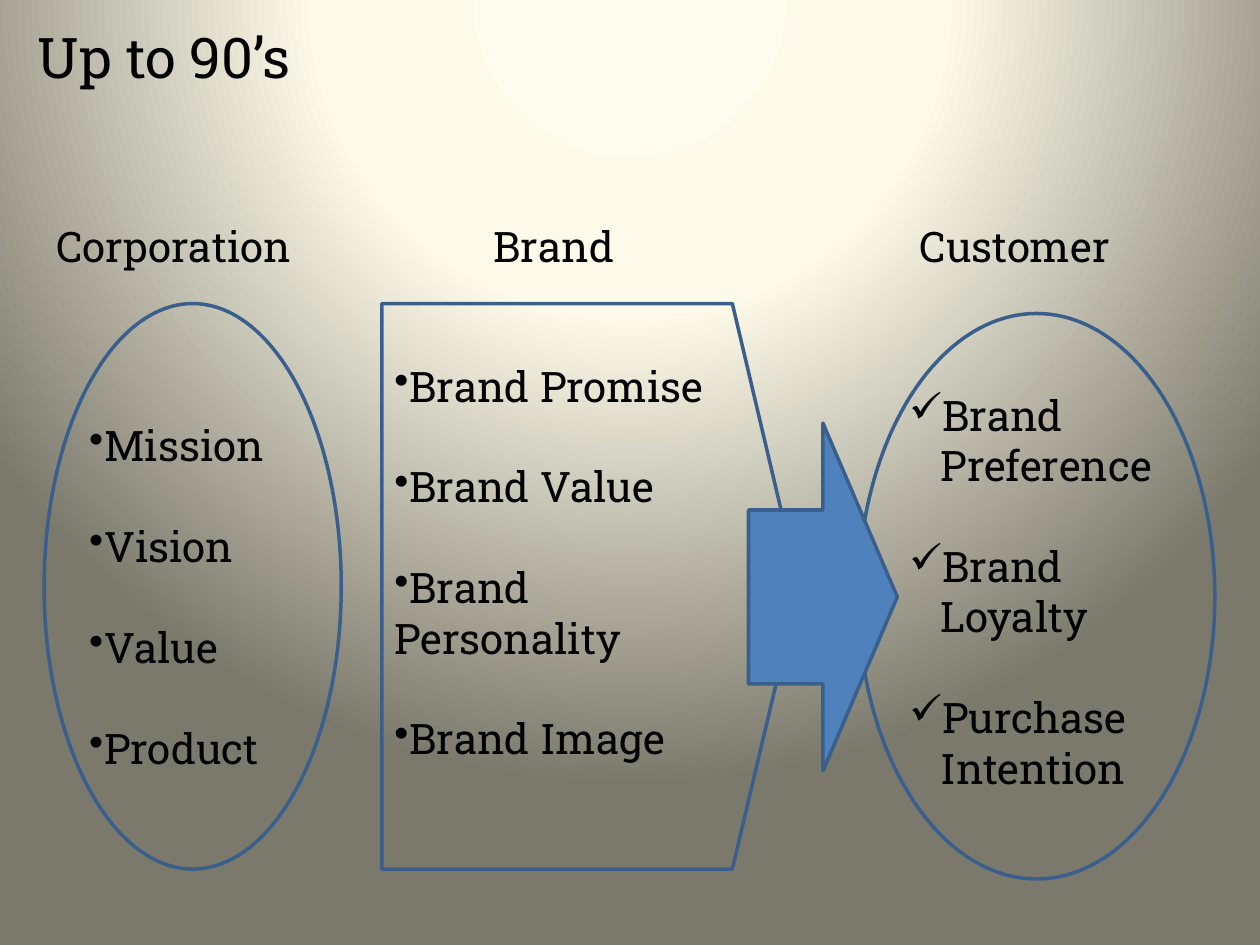
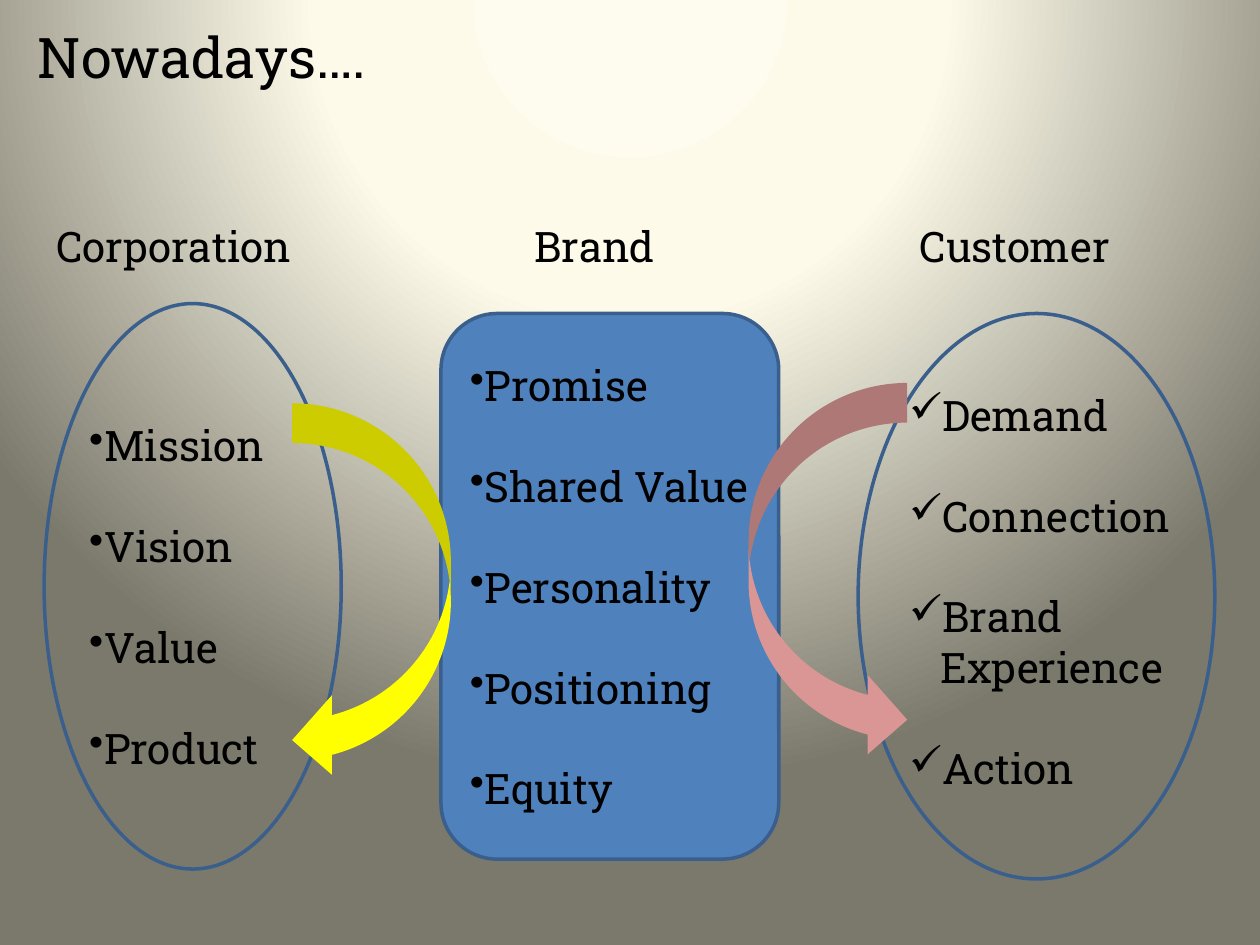
from dataclasses import dataclass

from lxml import etree
from pptx import Presentation
from pptx.dml.color import RGBColor
from pptx.enum.shapes import MSO_SHAPE
from pptx.enum.text import MSO_ANCHOR, MSO_AUTO_SIZE, PP_ALIGN
from pptx.oxml import parse_xml
from pptx.oxml.ns import nsdecls, qn
from pptx.shapes.autoshape import Shape
from pptx.slide import Slide, SlideMaster
from pptx.text.text import TextFrame
from pptx.util import Cm, Pt

OVAL = MSO_SHAPE.OVAL
PENTAGON = MSO_SHAPE.PENTAGON
ROUNDED = MSO_SHAPE.ROUNDED_RECTANGLE
RIGHT_ARROW = MSO_SHAPE.RIGHT_ARROW
CURVED_RIGHT = MSO_SHAPE.CURVED_RIGHT_ARROW
CURVED_LEFT = MSO_SHAPE.CURVED_LEFT_ARROW
TOP = MSO_ANCHOR.TOP
MIDDLE = MSO_ANCHOR.MIDDLE
LEFT = PP_ALIGN.LEFT
NO_AUTOFIT = MSO_AUTO_SIZE.NONE
TITLE_ONLY = 5


@dataclass(frozen=True)
class Theme:
    font: str = "Roboto Slab"
    title_size: float = 32
    body_size: float = 24
    item_gap: float = 28.8
    line_width: float = 2
    text: str = "000000"
    outline: str = "3A5F8C"
    blue: str = "4F81BD"
    pink: str = "D99694"
    yellow: str = "FFFF00"
    background: tuple[tuple[int, str], ...] = (
        (0, "FEFCEE"), (40, "FDFAEA"), (100, "7B796B"))


THEME = Theme()


@dataclass(frozen=True)
class Area:
    """A rectangle in centimetres."""
    left: float
    top: float
    width: float
    height: float

    def lengths(self) -> tuple[Cm, Cm, Cm, Cm]:
        return Cm(self.left), Cm(self.top), Cm(self.width), Cm(self.height)


@dataclass(frozen=True)
class Figure:
    kind: MSO_SHAPE
    area: Area
    fill: str | None = None
    outlined: bool = True
    adjustment: float | None = None


@dataclass(frozen=True)
class Items:
    lines: tuple[str, ...]
    bullet: str = "•"
    hanging: float = 0


@dataclass(frozen=True)
class Column:
    """A heading above a figure; without list_area the items sit in the figure."""
    heading: str
    heading_left: float
    heading_width: float
    figure: Figure
    items: Items
    list_area: Area | None = None
    anchor: MSO_ANCHOR = TOP
    top_inset: float = 0.13


@dataclass(frozen=True)
class Page:
    title: str
    columns: tuple[Column, ...]
    arrows: tuple[Figure, ...]


TITLE_AREA = Area(0.51, 0.33, 8, 1.63)
HEADING_TOP, HEADING_HEIGHT = 4.32, 1.27

CORPORATION = Column(
    "Corporation", 0.89, 5.92,
    Figure(OVAL, Area(0.89, 6.12, 5.99, 11.4)),
    Items(("Mission", "Vision", "Value", "Product")),
    Area(1.55, 8.33, 4.34, 7.44))


def customer(*lines: str) -> Column:
    return Column(
        "Customer", 18.29, 4.78,
        Figure(OVAL, Area(17.3, 6.32, 7.19, 11.4)),
        Items(lines, "✓", 0.63),
        Area(18.08, 7.72, 6.35, 8.46))


PAGES = (
    Page(
        "Up to 90’s",
        (CORPORATION,
         Column("Brand", 9.7, 3.2,
                Figure(PENTAGON, Area(7.7, 6.12, 8.41, 11.4), adjustment=0.16),
                Items(("Brand Promise", "Brand Value", "Brand Personality",
                       "Brand Image")),
                top_inset=1.14),
         customer("Brand\vPreference", "Brand\vLoyalty", "Purchase\vIntention")),
        (Figure(RIGHT_ARROW, Area(15.09, 8.53, 3, 7.01), THEME.blue),)),
    Page(
        "Nowadays….",
        (CORPORATION,
         customer("Demand", "Connection", "Brand\vExperience", "Action"),
         Column("Brand", 10.52, 3.2,
                Figure(ROUNDED, Area(8.89, 6.32, 6.81, 11), THEME.blue),
                Items(("Promise", "Shared Value", "Personality", "Positioning",
                       "Equity")),
                anchor=MIDDLE)),
        (Figure(CURVED_RIGHT, Area(15.09, 7.72, 3.2, 7.59), THEME.pink, False),
         Figure(CURVED_LEFT, Area(5.89, 8.13, 3.2, 7.59), THEME.yellow, False))),
)


def set_background(master: SlideMaster) -> None:
    """Give the master a circular gradient centred above the slide."""
    master.background.fill.solid()
    stops = "".join(
        f'<a:gs pos="{position * 1000}"><a:srgbClr val="{color}"/></a:gs>'
        for position, color in THEME.background)
    gradient = parse_xml(
        f'<a:gradFill {nsdecls("a")} rotWithShape="1"><a:gsLst>{stops}</a:gsLst>'
        '<a:path path="circle"><a:fillToRect l="50000" t="-80000" r="50000"'
        ' b="180000"/></a:path></a:gradFill>')
    properties = master.element.find(".//" + qn("p:bgPr"))
    properties.replace(properties.find(qn("a:solidFill")), gradient)


def style_text(frame: TextFrame, size: float, anchor: MSO_ANCHOR = TOP) -> None:
    frame.word_wrap = True
    frame.auto_size = NO_AUTOFIT
    frame.vertical_anchor = anchor
    for para in frame.paragraphs:
        para.alignment = LEFT
        for span in para.runs:
            span.font.name = THEME.font
            span.font.size = Pt(size)
            span.font.color.rgb = RGBColor.from_string(THEME.text)


def add_figure(page: Slide, figure: Figure) -> Shape:
    shape = page.shapes.add_shape(figure.kind, *figure.area.lengths())
    shape.shadow.inherit = False
    if figure.adjustment is not None:
        shape.adjustments[0] = figure.adjustment
    if figure.fill:
        shape.fill.solid()
        shape.fill.fore_color.rgb = RGBColor.from_string(figure.fill)
    else:
        shape.fill.background()
    if figure.outlined:
        shape.line.color.rgb = RGBColor.from_string(THEME.outline)
        shape.line.width = Pt(THEME.line_width)
    else:
        shape.line.fill.background()
    return shape


def write_items(frame: TextFrame, items: Items, anchor: MSO_ANCHOR) -> None:
    for index, line in enumerate(items.lines):
        para = frame.add_paragraph() if index else frame.paragraphs[0]
        para.text = line
        if index:
            para.space_before = Pt(THEME.item_gap)
        properties = para._p.get_or_add_pPr()
        properties.set("marL", str(Cm(items.hanging)))
        properties.set("indent", str(-Cm(items.hanging)))
        etree.SubElement(properties, qn("a:buChar")).set("char", items.bullet)
    style_text(frame, THEME.body_size, anchor)


def add_column(page: Slide, column: Column) -> None:
    heading_area = Area(column.heading_left, HEADING_TOP,
                        column.heading_width, HEADING_HEIGHT)
    heading = page.shapes.add_textbox(*heading_area.lengths())
    heading.text_frame.text = column.heading
    style_text(heading.text_frame, THEME.body_size)

    box = add_figure(page, column.figure)
    if column.list_area:
        box = page.shapes.add_textbox(*column.list_area.lengths())
    box.text_frame.margin_top = Cm(column.top_inset)
    write_items(box.text_frame, column.items, column.anchor)


def set_title(page: Slide, text: str) -> None:
    title = page.shapes.title
    title.left, title.top, title.width, title.height = TITLE_AREA.lengths()
    title.text_frame.text = text
    style_text(title.text_frame, THEME.title_size)


def main() -> None:
    deck = Presentation()
    deck.slide_width, deck.slide_height = Cm(25.4), Cm(19.05)
    set_background(deck.slide_master)
    for content in PAGES:
        page = deck.slides.add_slide(deck.slide_layouts[TITLE_ONLY])
        set_title(page, content.title)
        for column in content.columns:
            add_column(page, column)
        for arrow in content.arrows:
            add_figure(page, arrow)
    deck.save("out.pptx")


if __name__ == "__main__":
    main()
